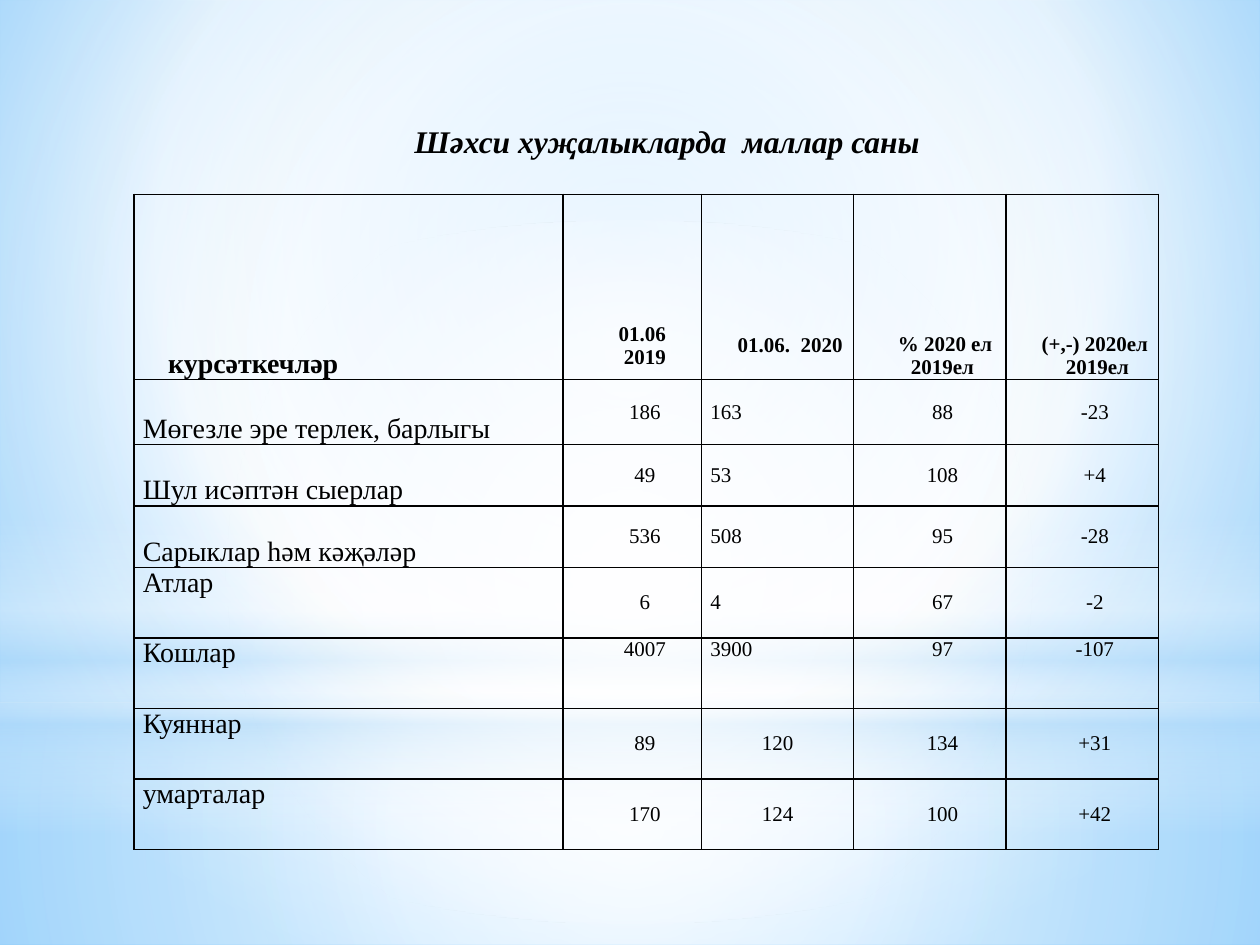
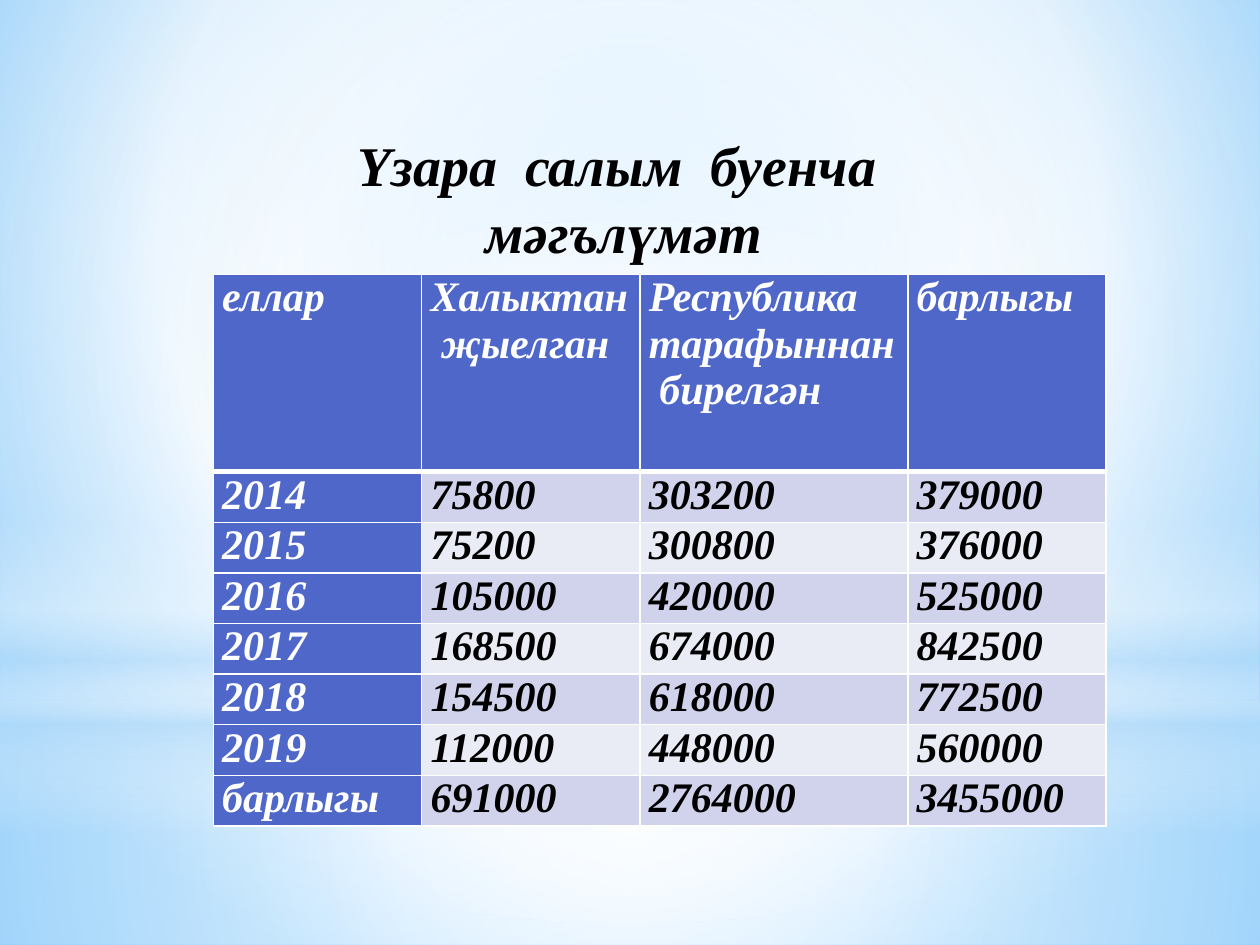
import pptx
import pptx.dml.color
import pptx.enum.shapes
import pptx.enum.text
import pptx.oxml
import pptx.oxml.ns
import pptx.util
from lxml import etree

Cm = pptx.util.Cm
Pt = pptx.util.Pt
qn = pptx.oxml.ns.qn
ALIGN = pptx.enum.text.PP_ALIGN
ANCHOR = pptx.enum.text.MSO_ANCHOR
SHAPE = pptx.enum.shapes.MSO_SHAPE

FONT = "Times New Roman"
COLORS = {
    "ink": "000000",
    "white": "FFFFFF",
    "sky": "B4DCFA",
    "sky_mid": "9ED5FF",
    "sky_edge": "5BB9FF",
    "accent": "4E67C8",
    "band_dark": "D0D3EB",
    "band_light": "E9EBF5",
}
SLIDE_WIDTH, SLIDE_HEIGHT = 25.4, 19.05
CENTER = (50, 50, 50, 50)
INDENT = Cm(0.51)

LIVESTOCK = [
    ["курсәткечләр", "01.06  2019", "01.06.  2020", " % 2020 ел 2019ел", "(+,-) 2020ел  2019ел"],
    ["Мөгезле эре терлек, барлыгы", "186", "163", "88", "-23"],
    ["Шул исәптән сыерлар", "49", "53", "108", "+4"],
    ["Сарыклар һәм кәҗәләр", "536", "508", "95", "-28"],
    ["Атлар", "6", "4", "67", "-2"],
    ["Кошлар", "4007", "3900", "97", "-107"],
    ["Куяннар", "89", "120", "134", "+31"],
    ["умарталар", "170", "124", "100", "+42"],
]
CONTRIBUTIONS = [
    ["еллар", "Халыктан  җыелган", "Республика тарафыннан  бирелгән", "барлыгы"],
    ["2014", "75800", "303200", "379000"],
    ["2015", "75200", "300800", "376000"],
    ["2016", "105000", "420000", "525000"],
    ["2017", "168500", "674000", "842500"],
    ["2018", "154500", "618000", "772500"],
    ["2019", "112000", "448000", "560000"],
    ["барлыгы", "691000", "2764000", "3455000"],
]


def rgb(name):
    return pptx.dml.color.RGBColor.from_string(COLORS[name])


def paint_gradient(fill, owner, stops, focus=None):
    """Fill with (position, colour, opacity) stops, round a focus or top to bottom."""
    fill.gradient()
    gradient = owner.find(".//" + qn("a:gradFill"))
    for child in list(gradient):
        gradient.remove(child)
    stop_list = etree.SubElement(gradient, qn("a:gsLst"))
    for position, color, opacity in stops:
        stop = etree.SubElement(stop_list, qn("a:gs"), pos=str(position * 1000))
        tint = etree.SubElement(stop, qn("a:srgbClr"), val=COLORS[color])
        if opacity < 100:
            etree.SubElement(tint, qn("a:alpha"), val=str(opacity * 1000))
    if focus:
        path = etree.SubElement(gradient, qn("a:path"), path="circle")
        sides = {side: str(value * 1000) for side, value in zip("ltrb", focus)}
        etree.SubElement(path, qn("a:fillToRect"), **sides)
    else:
        etree.SubElement(gradient, qn("a:lin"), ang="5400000", scaled="0")


def build_backdrop(layout, page):
    """Draw the sky on a page and hand its shapes over to the shared layout."""
    paint_gradient(
        layout.background.fill, layout.element,
        [(0, "sky_mid", 100), (60, "white", 100), (100, "sky_edge", 100)], (20, 10, 20, 60),
    )
    layers = [
        (SHAPE.RECTANGLE, 14.17, 4.88, CENTER,
         [(0, "white", 91), (37, "white", 76), (100, "sky", 79)]),
        (SHAPE.RECTANGLE, 0, 14.17, CENTER,
         [(0, "white", 89), (48, "white", 62), (100, "sky", 79)]),
        (SHAPE.RECTANGLE, 10.46, 6.35, None,
         [(0, "white", 0), (29, "white", 30), (45, "sky", 40),
          (55, "white", 26), (65, "sky", 60), (100, "white", 0)]),
        (SHAPE.OVAL, 4.45, 14.17, CENTER, [(0, "white", 100), (56, "white", 0)]),
    ]
    for order, (kind, top, height, focus, stops) in enumerate(layers):
        shape = page.shapes.add_shape(kind, 0, Cm(top), Cm(SLIDE_WIDTH), Cm(height))
        shape.shadow.inherit = False
        shape.line.fill.background()
        paint_gradient(shape.fill, shape.element, stops, focus)
        shape.element.nvSpPr.cNvPr.set("id", str(101 + order))
        layout.shapes.element.insert(2 + order, shape.element)


def add_span(para, text, size, color="ink", bold=False, italic=False):
    span = para.add_run()
    span.text = text
    span.font.name = FONT
    span.font.size = Pt(size)
    span.font.bold = bold
    span.font.italic = italic
    span.font.color.rgb = rgb(color)


def set_title(page, text, size, left, top, width, height, align, wrap):
    title = page.shapes.title
    title.left, title.top, title.width, title.height = map(Cm, (left, top, width, height))
    frame = title.text_frame
    frame.auto_size = pptx.enum.text.MSO_AUTO_SIZE.NONE
    frame.word_wrap = wrap
    frame.vertical_anchor = ANCHOR.TOP
    para = frame.paragraphs[0]
    para.alignment = align
    add_span(para, text, size, bold=True, italic=True)
    page.shapes.element.append(title.element)


def set_borders(cell, color, top=1, bottom=1):
    properties = cell._tc.get_or_add_tcPr()
    for order, (side, points) in enumerate(zip("LRTB", (1, 1, top, bottom))):
        line = etree.Element(qn("a:ln" + side), w=str(Pt(points)))
        solid = etree.SubElement(line, qn("a:solidFill"))
        etree.SubElement(solid, qn("a:srgbClr"), val=COLORS[color])
        properties.insert(order, line)


def add_grid(page, left, top, widths, heights, rows, format_cell):
    """Place a plain table; format_cell(cell, row, column, text) fills each cell."""
    frame = page.shapes.add_table(
        len(rows), len(widths), Cm(left), Cm(top), Cm(sum(widths)), Cm(sum(heights))
    )
    table = frame.table
    table.first_row = table.horz_banding = False
    for column, width in zip(table.columns, widths):
        column.width = Cm(width)
    for row, height in zip(table.rows, heights):
        row.height = Cm(height)
    for i, texts in enumerate(rows):
        for j, text in enumerate(texts):
            cell = table.cell(i, j)
            cell.margin_left = cell.margin_right = Cm(0.18)
            cell.margin_top = cell.margin_bottom = 0
            format_cell(cell, i, j, text)


def format_livestock(cell, i, j, text):
    header, label = i == 0, j == 0
    para = cell.text_frame.paragraphs[0]
    if header or (label and i < 4):
        cell.vertical_anchor = ANCHOR.BOTTOM
    elif label or i == 5:
        cell.vertical_anchor = ANCHOR.TOP
    else:
        cell.vertical_anchor = ANCHOR.MIDDLE
    if header:
        cell.margin_bottom = Cm({1: 0.2, 2: 0.45}.get(j, 0))
    if not label and (header or j != 2 or i > 5):
        para.alignment = ALIGN.CENTER
    if header or j in (1, 3, 4):
        properties = para._p.get_or_add_pPr()
        properties.set("marL", str(INDENT))
        properties.set("indent", "0")
    add_span(para, text, 16 if label else 12, bold=header)
    cell.fill.background()
    set_borders(cell, "ink")


def format_contribution(cell, i, j, text):
    heading = i == 0 or j == 0
    band = "band_dark" if i % 2 else "band_light"
    add_span(cell.text_frame.paragraphs[0], text, 24,
             "white" if heading else "ink", bold=True, italic=True)
    cell.fill.solid()
    cell.fill.fore_color.rgb = rgb("accent" if heading else band)
    set_borders(cell, "white", top=3 if i == 1 else 1, bottom=3 if i == 0 else 1)


def main():
    deck = pptx.Presentation()
    deck.slide_width, deck.slide_height = Cm(SLIDE_WIDTH), Cm(SLIDE_HEIGHT)
    layout = deck.slide_layouts[5]

    livestock = deck.slides.add_slide(layout)
    build_backdrop(layout, livestock)
    add_grid(livestock, 2.7, 3.92, [8.65, 2.79, 3.07, 3.07, 3.07],
             [3.73, 1.31] + [1.24] * 2 + [1.42] * 4, LIVESTOCK, format_livestock)
    set_title(livestock, "Шәхси хуҗалыкларда  маллар саны", 18,
              8.1, 2.33, 11.05, 1.02, ALIGN.LEFT, False)

    contributions = deck.slides.add_slide(layout)
    add_grid(contributions, 4.3, 5.53, [4.2, 4.4, 5.4, 4],
             [3.98] + [1.02] * 7, CONTRIBUTIONS, format_contribution)
    set_title(contributions, "Үзара  салым  буенча  мәгълүмәт", 32,
              4.18, 2.5, 16.8, 3, ALIGN.CENTER, True)

    deck.save("out.pptx")


if __name__ == "__main__":
    main()
